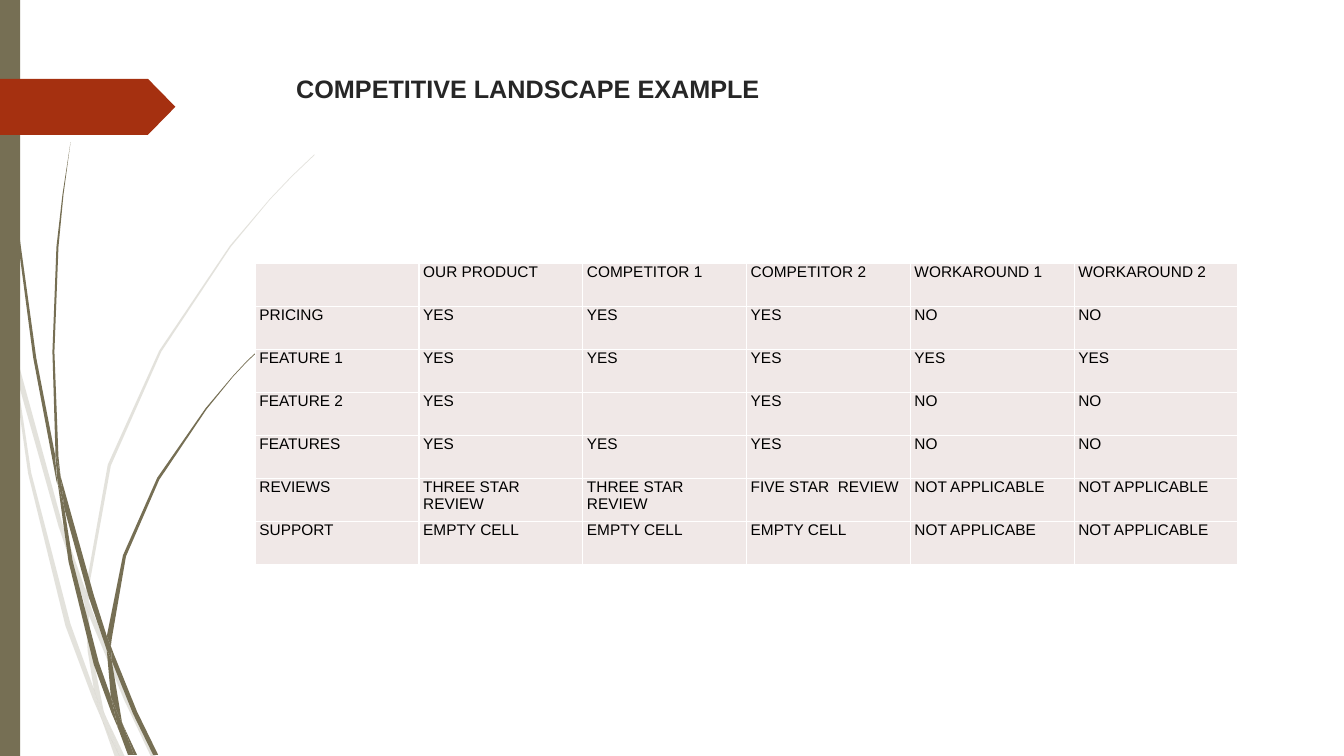
from lxml.etree import SubElement
from pptx import Presentation
from pptx.dml.color import RGBColor
from pptx.enum.shapes import MSO_SHAPE as Shape
from pptx.enum.text import MSO_ANCHOR as Anchor
from pptx.oxml.ns import qn
from pptx.util import Pt

COLORS = {
    "olive": "766F54", "rust": "A53010", "title": "262626",
    "cell": "F0E8E7", "border": "FFFFFF", "text": "000000",
}
FONT = "Arial"
STALK_UNIT = Pt(0.72)

PALE_STALKS = [
    [11, 350, 9, 322, 0, 282, 0, 299, 10, 344],
    [58, 522, 84, 599, 85, 586, 62, 520, 14, 345, 17, 376],
    [92, 607, 88, 596, 88, 610, 123, 694, 150, 751, 155, 751, 127, 692],
    [119, 751, 124, 751, 105, 711],
    [93, 683, 70, 619, 31, 469, 17, 376, 11, 350, 28, 470, 65, 621,
     92, 693, 101, 714, 99, 707],
    [84, 599, 87, 646, 93, 683, 96, 692, 105, 711, 103, 706, 91, 646,
     88, 610, 88, 608],
    [88, 584, 110, 462, 160, 349, 229, 245, 268, 198, 290, 175, 312, 154,
     312, 153, 289, 175, 268, 197, 228, 244, 158, 348, 107, 461, 85, 584,
     85, 586, 88, 596],
    [101, 714, 114, 751, 119, 751],
    [88, 608, 88, 596, 85, 586, 84, 599],
    [96, 692, 93, 683, 99, 707, 101, 714, 119, 751, 105, 711],
]
DARK_STALKS = [
    [7, 110, 17, 233, 33, 355, 56, 477, 57, 481, 55, 457, 55, 453, 36, 355,
     19, 232, 8, 109, 5, 48, 4, 0, 3, 0, 4, 48],
    [88, 592, 106, 645, 106, 631, 93, 590, 60, 472, 64, 505],
    [113, 649, 110, 641, 111, 656, 132, 708, 152, 749, 157, 749, 136, 706],
    [110, 691, 98, 657, 72, 556, 64, 505, 57, 477, 68, 557, 93, 659,
     111, 708, 117, 722, 116, 717],
    [60, 472, 58, 453, 54, 349, 58, 245, 63, 193, 70, 141, 62, 193,
     56, 245, 52, 349, 55, 449],
    [133, 749, 136, 749, 122, 719],
    [57, 477, 64, 505, 60, 472, 55, 449, 55, 453],
    [111, 633, 125, 552, 158, 476, 205, 406, 231, 374, 245, 359, 261, 344,
     260, 344, 245, 358, 231, 373, 204, 405, 156, 474, 122, 551, 106, 631,
     110, 641],
    [117, 722, 127, 749, 131, 749],
    [106, 645, 110, 691, 116, 706, 122, 719, 121, 716, 111, 656, 109, 651],
    [106, 645, 109, 651, 111, 656, 110, 641, 106, 631],
    [116, 706, 110, 691, 116, 717, 117, 722, 130, 749, 133, 749, 122, 719],
]

NOT_APPLICABLE = "NOT APPLICABLE"
ROWS = [
    ["", "OUR PRODUCT", "COMPETITOR 1", "COMPETITOR 2", "WORKAROUND 1", "WORKAROUND 2"],
    ["PRICING", "YES", "YES", "YES", "NO", "NO"],
    ["FEATURE 1"] + ["YES"] * 5,
    ["FEATURE 2", "YES", "", "YES", "NO", "NO"],
    ["FEATURES", "YES", "YES", "YES", "NO", "NO"],
    ["REVIEWS", "THREE STAR REVIEW", "THREE STAR REVIEW", "FIVE STAR  REVIEW",
     NOT_APPLICABLE, NOT_APPLICABLE],
    ["SUPPORT", "EMPTY CELL", "EMPTY CELL", "EMPTY CELL", "NOT APPLICABE", NOT_APPLICABLE],
]


def color(name):
    return RGBColor.from_string(COLORS[name])


def paint(shape, name):
    shape.shadow.inherit = False
    shape.fill.solid()
    shape.fill.fore_color.rgb = color(name)
    shape.line.fill.background()


def style_font(font, size, name, bold=False):
    font.name = FONT
    font.size = Pt(size)
    font.bold = bold
    font.color.rgb = color(name)


def add_stalks(page, left, top, outlines, opacity=100):
    group = page.shapes.add_group_shape()
    for outline in outlines:
        start, *rest = zip(outline[::2], outline[1::2])
        builder = group.shapes.build_freeform(*start, scale=STALK_UNIT)
        builder.add_line_segments(rest, close=True)
        stalk = builder.convert_to_shape(Pt(left), Pt(top))
        paint(stalk, "olive")
        if opacity < 100:
            tint = stalk.element.spPr.find(qn("a:solidFill"))[0]
            SubElement(tint, qn("a:alpha"), val=str(opacity * 1000))


def add_side_bar(page, left, top, width, height):
    bar = page.shapes.add_shape(Shape.RECTANGLE, Pt(left), Pt(top), Pt(width), Pt(height))
    paint(bar, "olive")
    arrow = page.shapes.add_shape(
        Shape.PENTAGON, Pt(left), Pt(top + 56.3), Pt(125.3), Pt(40))
    arrow.adjustments[0] = 0.49
    paint(arrow, "rust")


def add_title(page, left, top, width, height):
    box = page.shapes.add_textbox(Pt(left), Pt(top), Pt(width), Pt(height))
    frame = box.text_frame
    frame.word_wrap = True
    frame.vertical_anchor = Anchor.TOP
    para = frame.paragraphs[0]
    para.text = "COMPETITIVE LANDSCAPE EXAMPLE"
    style_font(para.font, 18, "title", bold=True)


def add_borders(cell):
    props = cell._tc.get_or_add_tcPr()
    for index, side in enumerate(("lnL", "lnR", "lnT", "lnB")):
        line = props.makeelement(qn(f"a:{side}"), {"w": str(Pt(1))})
        fill = SubElement(line, qn("a:solidFill"))
        SubElement(fill, qn("a:srgbClr"), val=COLORS["border"])
        props.insert(index, line)


def fill_cell(cell, text):
    cell.fill.solid()
    cell.fill.fore_color.rgb = color("cell")
    cell.margin_left = cell.margin_right = Pt(3)
    cell.margin_top = cell.margin_bottom = 0
    para = cell.text_frame.paragraphs[0]
    para.text = text
    style_font(para.font, 11, "text")
    add_borders(cell)


def add_comparison(page, left, top, width, height):
    frame = page.shapes.add_table(
        len(ROWS), len(ROWS[0]), Pt(left), Pt(top), Pt(width), Pt(height))
    table = frame.table
    table.first_row = table.horz_banding = False
    for column in table.columns:
        column.width = Pt(width / len(ROWS[0]))
    for row, texts in zip(table.rows, ROWS):
        row.height = Pt(height / len(ROWS))
        for cell, text in zip(row.cells, texts):
            fill_cell(cell, text)


def main():
    deck = Presentation()
    deck.slide_width, deck.slide_height = Pt(960), Pt(540)
    page = deck.slides.add_slide(deck.slide_layouts[6])
    add_stalks(page, 0, 0, PALE_STALKS, opacity=20)
    add_stalks(page, 0, 0, DARK_STALKS)
    add_side_bar(page, 0, 0, 14.4, 540)
    add_title(page, 204.5, 49, 702, 100.8)
    add_comparison(page, 182.3, 188.1, 702, 215.3)
    deck.save("out.pptx")


if __name__ == "__main__":
    main()
